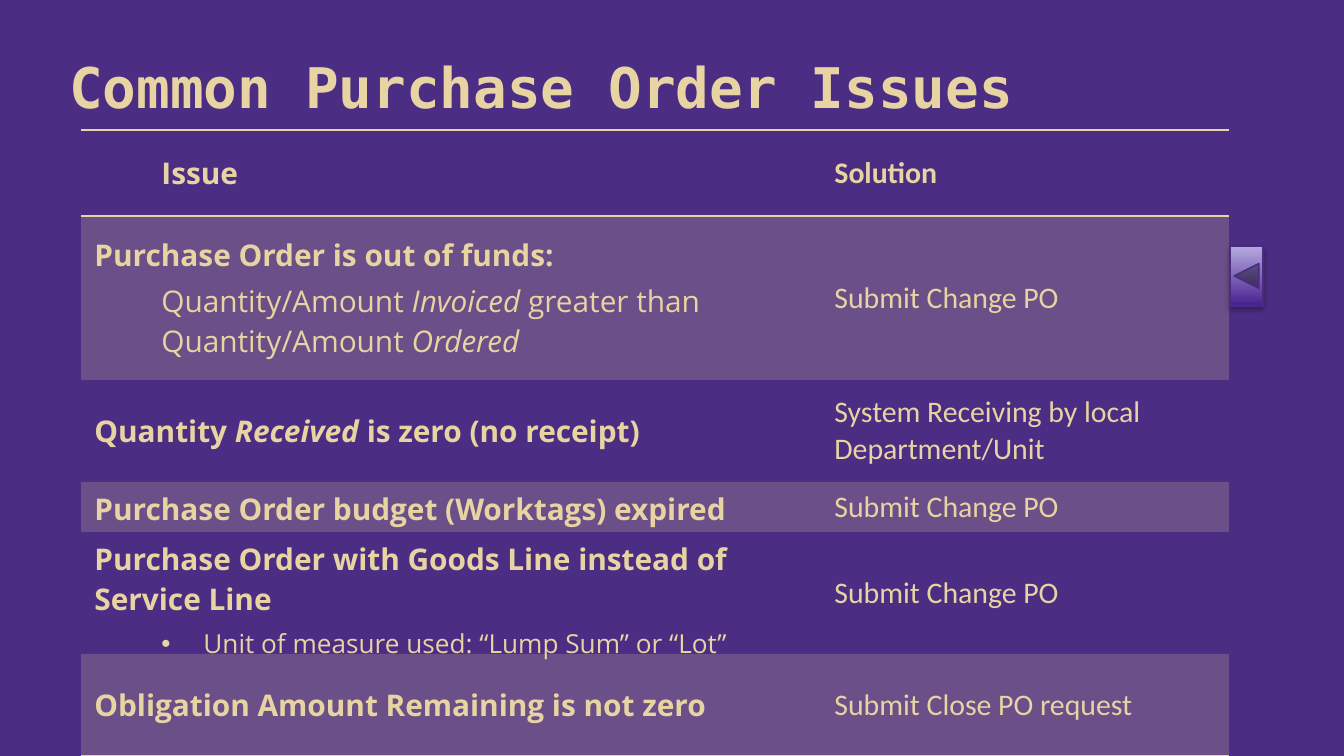
import pptx
import pptx.dml.color
import pptx.enum.shapes
import pptx.enum.text
import pptx.oxml
import pptx.oxml.ns
import pptx.util

PX = 914400 / 134.4
GOLD, PURPLE = "E8D3A2", "4B2E83"
NS = 'xmlns:a="http://schemas.openxmlformats.org/drawingml/2006/main"'


def px(*lengths):
    return [pptx.util.Emu(round(length * PX)) for length in lengths]


def color(value):
    return pptx.dml.color.RGBColor.from_string(value)


# Deck and page
deck = pptx.Presentation()
deck.slide_width, deck.slide_height = px(1344, 756)
page = deck.slides.add_slide(deck.slide_layouts[6])
page.background.fill.solid()
page.background.fill.fore_color.rgb = color(PURPLE)

# Title
box = page.shapes.add_textbox(*px(56, 42, 1113, 84))
box.text_frame.word_wrap = True
box.text_frame.vertical_anchor = pptx.enum.text.MSO_ANCHOR.BOTTOM
span = box.text_frame.paragraphs[0].add_run()
span.text = "Common Purchase Order Issues"
title_format = {"name": "DejaVu Sans Mono", "size": pptx.util.Pt(30), "bold": True}
for key, value in title_format.items():
    setattr(span.font, key, value)
span.font.color.rgb = color(GOLD)

# Issue table: row height, issue paragraphs (style, spans), solution
# Every second span of a paragraph is italic
rows = [
    (86, [("header", ["Issue"])], "Solution"),
    (164, [("main", ["Purchase Order is out of funds:"]),
           ("detail", ["Quantity/Amount ", "Invoiced",
                       " greater than Quantity/Amount ", "Ordered"])],
     "Submit Change PO"),
    (102, [("main", ["Quantity ", "Received", " is zero (no receipt)"])],
     "System Receiving by local Department/Unit"),
    (50, [("single", ["Purchase Order budget (Worktags) expired"])], "Submit Change PO"),
    (102, [("main", ["Purchase Order with Goods Line instead of Service Line"]),
           ("bullet", ["Unit of measure used: “Lump Sum” or “Lot”"])],
     "Submit Change PO"),
    (102, [("single", ["Obligation Amount Remaining is not zero"])],
     "Submit Close PO request"),
]

# Font, size, bold, level, left margin and indent in px, space after in pt
styles = {
    "header": ("Open Sans", 16, True, 1, 67, 0, 3),
    "main": ("Open Sans", 16, True, 0, 0, 0, 3),
    "single": ("Open Sans", 16, True, 0, 0, 0, 0),
    "detail": ("Open Sans", 16, False, 1, 67, 0, 3),
    "bullet": ("Open Sans", 14, False, 1, 109, -42, 3),
    "solution": ("Calibri", 16, False, 0, 0, 0, 0),
    "solution header": ("Calibri", 16, True, 0, 0, 0, 0),
}

frame = page.shapes.add_table(len(rows), 2, *px(81, 130, 1148, 606))
table = frame.table
table.first_row = table.horz_banding = False
# Plain table style without grid lines
style_id = table._tbl.tblPr.find(pptx.oxml.ns.qn("a:tableStyleId"))
style_id.text = "{2D5ABB26-0587-4C30-8999-92F81FD0307C}"
for column, width in zip(table.columns, px(740, 408)):
    column.width = width

for row_index, (height, issue, solution) in enumerate(rows):
    table.rows[row_index].height = px(height)[0]
    solution_style = "solution" if row_index else "solution header"
    for column_index, paras in enumerate([issue, [(solution_style, [solution])]]):
        cell = table.cell(row_index, column_index)
        cell.vertical_anchor = pptx.enum.text.MSO_ANCHOR.MIDDLE

        # Shaded bands
        if row_index % 2:
            cell.fill.solid()
            cell.fill.fore_color.rgb = color(GOLD)
            tint = cell._tc.tcPr.find(".//" + pptx.oxml.ns.qn("a:srgbClr"))
            tint.append(pptx.oxml.parse_xml(f'<a:alpha {NS} val="20000"/>'))
        else:
            cell.fill.background()

        # Rules around the header and under the last row
        edges = {0: ["lnT", "lnB"], len(rows) - 1: ["lnB"]}.get(row_index, [])
        for position, edge in enumerate(edges):
            cell._tc.tcPr.insert(position, pptx.oxml.parse_xml(
                f'<a:{edge} {NS} w="12700"><a:solidFill><a:srgbClr val="{GOLD}"/>'
                f'</a:solidFill></a:{edge}>'))

        # Cell text
        for para_index, (style, texts) in enumerate(paras):
            text_frame = cell.text_frame
            para = text_frame.add_paragraph() if para_index else text_frame.paragraphs[0]
            font, size, bold, level, margin, indent, after = styles[style]
            para.level = level
            para.space_after = pptx.util.Pt(after)
            properties = para._p.get_or_add_pPr()
            for key, length in zip(("marL", "indent"), px(margin, indent)):
                properties.set(key, str(int(length)))
            if style == "bullet":
                for bullet in ('buFont {} typeface="Arial"', 'buChar {} char="•"'):
                    properties.append(pptx.oxml.parse_xml(f"<a:{bullet.format(NS)}/>"))
            for span_index, text in enumerate(texts):
                span = para.add_run()
                span.text = text
                span_format = {"name": font, "size": pptx.util.Pt(size), "bold": bold,
                               "italic": span_index % 2 == 1}
                for key, value in span_format.items():
                    setattr(span.font, key, value)
                span.font.color.rgb = color(GOLD)

# Back button
button = page.shapes.add_shape(
    pptx.enum.shapes.MSO_SHAPE.ACTION_BUTTON_BACK_OR_PREVIOUS, *px(1230, 246, 33, 60))
button.fill.gradient()
button.fill.gradient_angle = 90
for stop, value in zip(button.fill.gradient_stops, ("472190", "B7ABE0")):
    stop.color.rgb = color(value)
button.line.color.rgb = color("492B82")
button.line.width = pptx.util.Pt(0.75)
button.shadow.inherit = False
effects = button._element.spPr.find(pptx.oxml.ns.qn("a:effectLst"))
effects.append(pptx.oxml.parse_xml(
    f'<a:outerShdw {NS} blurRad="40000" dist="23000" dir="5400000" rotWithShape="0">'
    '<a:srgbClr val="000000"><a:alpha val="35000"/></a:srgbClr></a:outerShdw>'))

deck.save("out.pptx")
